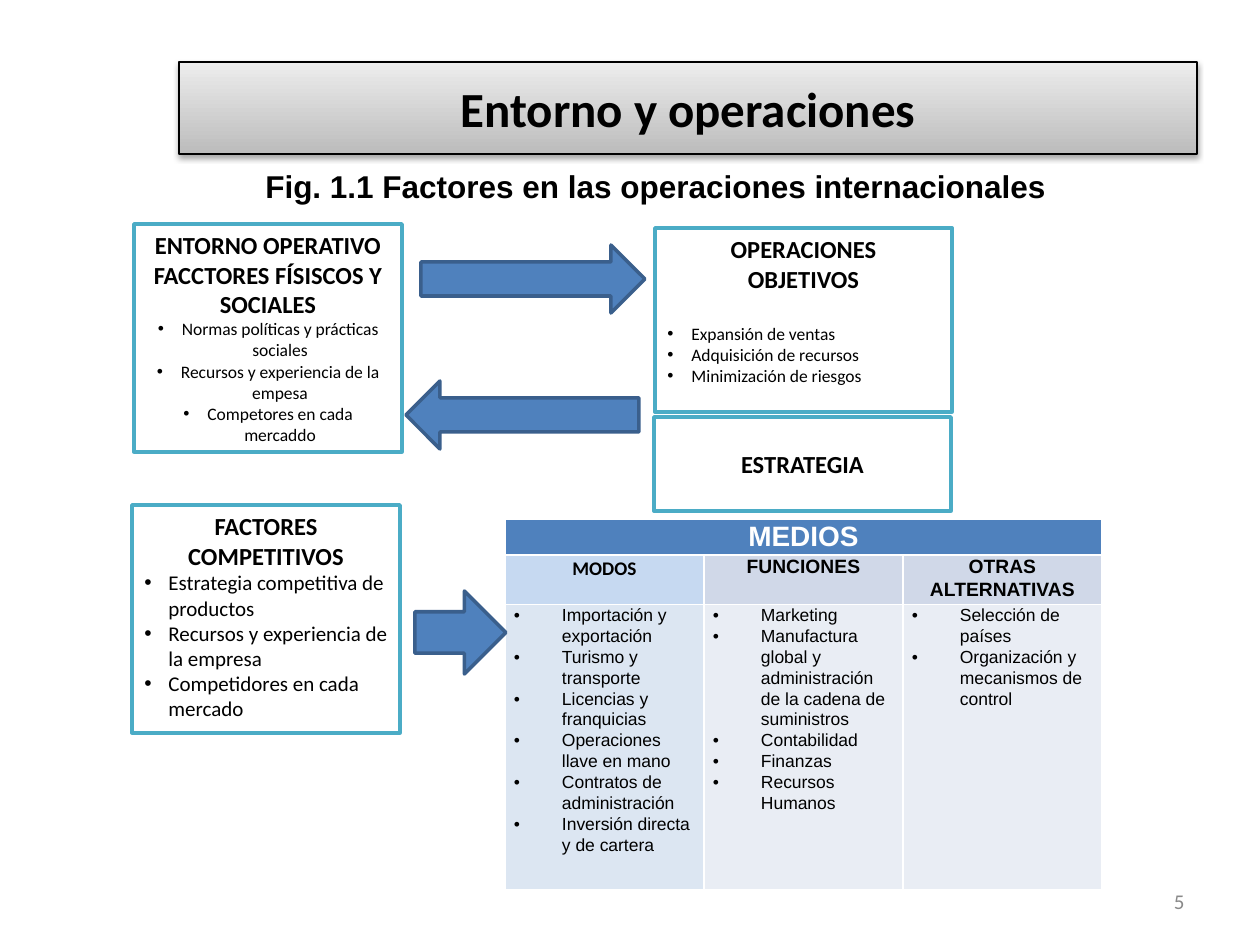
from lxml.etree import SubElement
from pptx import Presentation
from pptx.dml.color import RGBColor
from pptx.enum.shapes import MSO_SHAPE
from pptx.enum.text import MSO_ANCHOR, PP_ALIGN
from pptx.oxml.ns import qn
from pptx.util import Emu, Pt

PX = 914400 / 126
BLACK = RGBColor(0x00, 0x00, 0x00)
WHITE = RGBColor(0xFF, 0xFF, 0xFF)
GREY = RGBColor(0x89, 0x89, 0x89)
TITLE_TOP = RGBColor(0xED, 0xED, 0xED)
TITLE_BOTTOM = RGBColor(0xBC, 0xBC, 0xBC)
TEAL = RGBColor(0x4B, 0xAC, 0xC6)
BLUE = RGBColor(0x4F, 0x81, 0xBD)
DARK_BLUE = RGBColor(0x3A, 0x5F, 0x8C)
MODES_HEAD = RGBColor(0xC6, 0xD9, 0xF1)
MODES_BODY = RGBColor(0xDC, 0xE6, 0xF2)
OTHER_HEAD = RGBColor(0xD0, 0xD8, 0xE8)
OTHER_BODY = RGBColor(0xE9, 0xED, 0xF4)
CENTER, LEFT, RIGHT = PP_ALIGN.CENTER, PP_ALIGN.LEFT, PP_ALIGN.RIGHT


def px(*lengths):
    return [Emu(round(length * PX)) for length in lengths]


def write(frame, lines, size, font="Calibri", bold=True, color=BLACK,
          align=CENTER, indent=0, spacing=None):
    """Append one paragraph per line; an indent in px makes them bulleted."""
    for line in lines:
        para = frame.paragraphs[-1]
        if para.runs:
            para = frame.add_paragraph()
        para.alignment = align
        para.line_spacing = spacing
        if indent:
            properties = para._p.get_or_add_pPr()
            margin = px(indent)[0]
            properties.set("marL", str(margin))
            properties.set("indent", str(-margin))
            SubElement(properties, qn("a:buFont"), typeface="Arial")
            SubElement(properties, qn("a:buChar"), char="•")
        span = para.add_run()
        span.text = line
        span.font.name = font
        span.font.size = Pt(size)
        span.font.bold = bold
        span.font.color.rgb = color


deck = Presentation()
deck.slide_width, deck.slide_height = px(1260, 945)
slide = deck.slides.add_slide(deck.slide_layouts[6])
shapes = slide.shapes

# Title banner
banner = shapes.add_shape(MSO_SHAPE.RECTANGLE, *px(179, 62, 1018, 92))
banner.fill.gradient()
banner.fill.gradient_angle = 270
for stop, color in zip(banner.fill.gradient_stops, (TITLE_TOP, TITLE_BOTTOM)):
    stop.color.rgb = color
banner.line.color.rgb = BLACK
banner.line.width = Pt(0.75)
banner.text_frame.word_wrap = True
write(banner.text_frame, ["Entorno y operaciones"], 28)

# Caption and page number
caption = shapes.add_textbox(*px(253, 161, 834, 50))
caption.text_frame.word_wrap = True
write(caption.text_frame, ["Fig. 1.1 Factores en las operaciones internacionales"],
      18, "Arial", align=LEFT)
page_number = shapes.add_textbox(*px(903, 876, 294, 50))
page_number.text_frame.word_wrap = True
page_number.text_frame.vertical_anchor = MSO_ANCHOR.MIDDLE
write(page_number.text_frame, ["5"], 12, bold=False, color=GREY, align=RIGHT)

# Outlined boxes: place, anchor, headings, bullets, bullet size, alignment, gap
boxes = [
    ((134, 224, 268, 228), MSO_ANCHOR.TOP,
     ["ENTORNO OPERATIVO", "FACCTORES FÍSISCOS Y SOCIALES"],
     ["Normas políticas y prácticas sociales",
      "Recursos y experiencia de la empesa",
      "Competores en cada mercaddo"], 10, CENTER, 0),
    ((132, 505, 268, 228), MSO_ANCHOR.TOP,
     ["FACTORES COMPETITIVOS"],
     ["Estrategia competitiva de productos",
      "Recursos y experiencia de la empresa",
      "Competidores en cada mercado"], 12, LEFT, 0),
    ((655, 228, 297, 184), MSO_ANCHOR.TOP,
     ["OPERACIONES", "OBJETIVOS"],
     ["Expansión de ventas",
      "Adquisición de recursos",
      "Minimización de riesgos"], 10, LEFT, 17),
    ((654, 417, 297, 94), MSO_ANCHOR.MIDDLE, ["ESTRATEGIA"], [], 10, LEFT, 0),
]
for place, anchor, headings, bullets, size, align, gap in boxes:
    box = shapes.add_shape(MSO_SHAPE.RECTANGLE, *px(*place))
    box.shadow.inherit = False
    box.fill.background()
    box.line.color.rgb = TEAL
    box.line.width = Pt(2)
    frame = box.text_frame
    frame.word_wrap = True
    frame.vertical_anchor = anchor
    write(frame, headings, 14)
    frame.paragraphs[-1].space_after = Pt(gap)
    write(frame, bullets, size, bold=False, align=align, indent=24)

# Table of means
columns = [
    ("MODOS", "Calibri", MODES_HEAD, MODES_BODY,
     ["Importación y exportación", "Turismo y transporte",
      "Licencias y franquicias", "Operaciones llave en mano",
      "Contratos de administración", "Inversión directa y de cartera"]),
    ("FUNCIONES", "Arial", OTHER_HEAD, OTHER_BODY,
     ["Marketing",
      "Manufactura global y administración de la cadena de suministros",
      "Contabilidad", "Finanzas", "Recursos Humanos"]),
    ("OTRAS ALTERNATIVAS", "Arial", OTHER_HEAD, OTHER_BODY,
     ["Selección de países", "Organización y mecanismos de control"]),
]
table = shapes.add_table(3, 3, *px(505, 519, 597, 367)).table
table.horz_banding = False
for column in table.columns:
    column.width = px(199)[0]
for row, height in zip(table.rows, px(33, 49, 285)):
    row.height = height
for cell in table.iter_cells():
    cell.margin_left, cell.margin_right = px(9, 9)
    cell.margin_top = cell.margin_bottom = 0
    cell.fill.solid()
    cell.fill.fore_color.rgb = BLUE
table.cell(0, 0).merge(table.cell(0, 2))
write(table.cell(0, 0).text_frame, ["MEDIOS"], 16, "Arial", color=WHITE, spacing=1.07)
for index, (heading, font, head_fill, body_fill, items) in enumerate(columns):
    head, body = table.cell(1, index), table.cell(2, index)
    head.fill.fore_color.rgb = head_fill
    body.fill.fore_color.rgb = body_fill
    write(head.text_frame, [heading], 11, font, spacing=1.07)
    write(body.text_frame, items, 10, "Arial", bold=False, align=LEFT,
          indent=48, spacing=1.07)

# Block arrows
for kind, place in [
    (MSO_SHAPE.RIGHT_ARROW, (421, 245, 224, 68)),
    (MSO_SHAPE.LEFT_ARROW, (406, 381, 233, 68)),
    (MSO_SHAPE.RIGHT_ARROW, (415, 591, 91, 83)),
]:
    arrow = shapes.add_shape(kind, *px(*place))
    arrow.shadow.inherit = False
    arrow.fill.solid()
    arrow.fill.fore_color.rgb = BLUE
    arrow.line.color.rgb = DARK_BLUE
    arrow.line.width = Pt(2)

deck.save("out.pptx")
